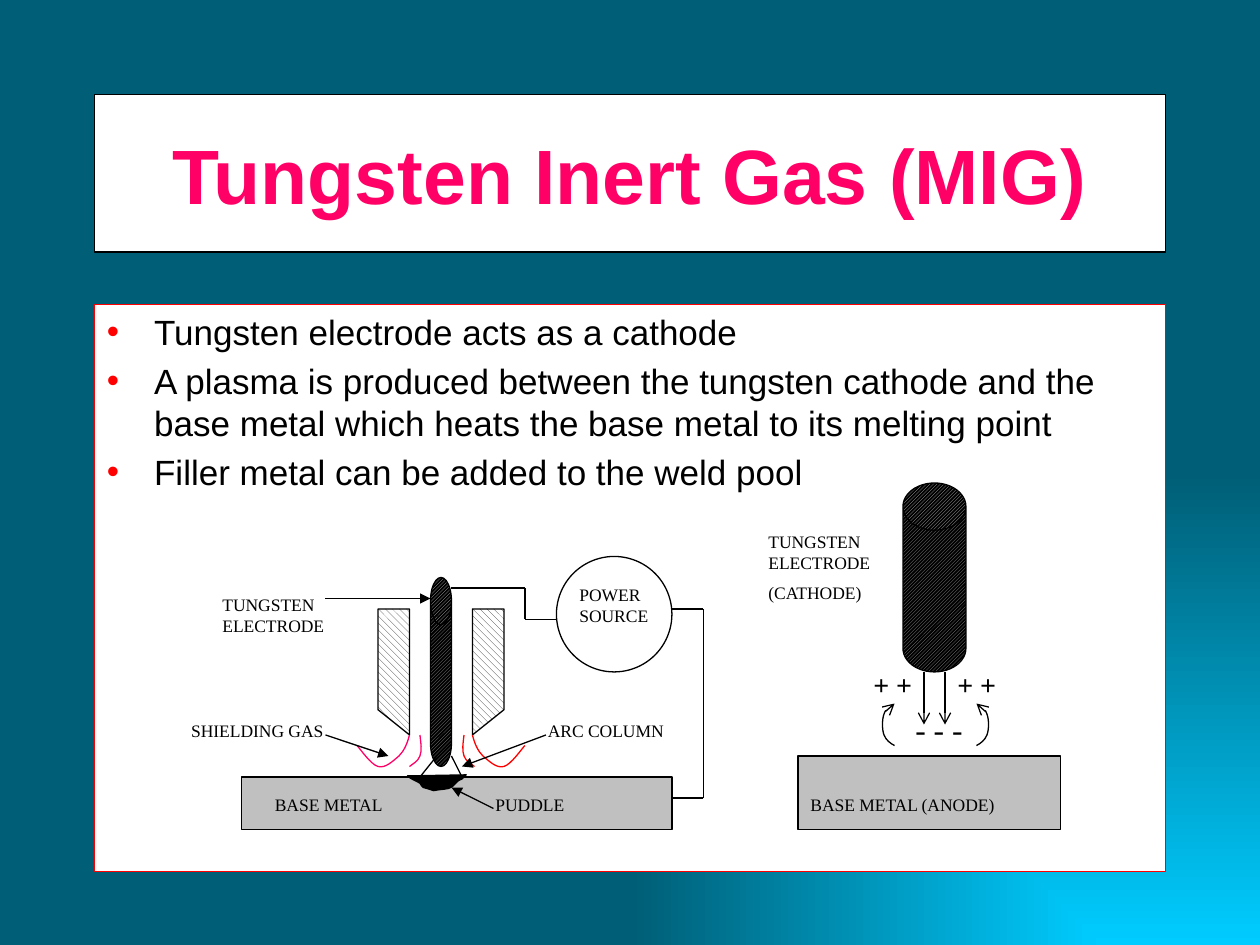
import pptx
import pptx.dml.color
import pptx.enum.dml
import pptx.enum.shapes
import pptx.enum.text
import pptx.oxml
import pptx.oxml.ns
import pptx.util
from lxml import etree

RGB = pptx.dml.color.RGBColor
BLACK, WHITE, SILVER = RGB(0, 0, 0), RGB(255, 255, 255), RGB(0xC0, 0xC0, 0xC0)
RED, PINK = RGB(255, 0, 0), RGB(0xFF, 0, 0x66)
CHARCOAL, GREY = RGB(0x33, 0x33, 0x33), RGB(0x96, 0x96, 0x96)
CYAN, TEAL = RGB(0, 0xCC, 0xFF), RGB(0, 0x5E, 0x76)

SHAPE = pptx.enum.shapes.MSO_SHAPE
PATTERN = pptx.enum.dml.MSO_PATTERN_TYPE
ALIGN = pptx.enum.text.PP_ALIGN
ANCHOR = pptx.enum.text.MSO_ANCHOR
Pt = pptx.util.Pt
qn = pptx.oxml.ns.qn

# All places and sizes are counted in grid units of a twelfth of an inch.
GRID = pptx.util.Cm(2.54 / 12)

TITLE = "Tungsten Inert Gas (MIG)"
BULLETS = [
    "Tungsten electrode acts as a cathode",
    "A plasma is produced between the tungsten cathode and the base metal "
    "which heats the base metal to its melting point",
    "Filler metal can be added to the weld pool",
]
HATCH = (PATTERN.WIDE_DOWNWARD_DIAGONAL, CHARCOAL, WHITE)
DARK_HATCH = (PATTERN.DARK_UPWARD_DIAGONAL, GREY, BLACK)

# preset, box, fill, flips, adjustment
TORCH_PARTS = [
    (SHAPE.RECTANGLE, (23, 74, 41, 5), SILVER, (), None),
    (SHAPE.FLOWCHART_MANUAL_INPUT, (36, 58, 3, 12), HATCH, ("flipV",), None),
    (SHAPE.FLOWCHART_MANUAL_INPUT, (45, 58, 3, 12), HATCH, ("flipH", "flipV"), None),
    (SHAPE.CAN, (41, 55, 2, 18), DARK_HATCH, (), 2.25),
    (SHAPE.OVAL, (53, 53, 11, 11), None, (), None),
]
CATHODE_PARTS = [
    (SHAPE.CAN, (86, 46, 6, 18), DARK_HATCH, (), 0.75),
    (SHAPE.RECTANGLE, (76, 72, 25, 7), SILVER, (), None),
]

# Bezier curves: a start, then two control points and an end for each piece
OUTER_GAS = [(39, 70), (38.8, 70.8), (38.5, 71.5), (38, 72), (37.4, 72.5),
             (36.7, 73.2), (36, 73), (35.3, 72.8), (34.3, 71.3), (34, 71)]
INNER_GAS = [(40, 70), (40.1, 70.8), (40.2, 71.5), (40, 72),
             (39.8, 72.5), (39.4, 72.7), (39, 73)]
ION_PATH = [(93, 71), (93.4, 70.8), (93.8, 70.5), (94, 70), (94.2, 69.5),
            (94.2, 68.5), (94, 68), (93.8, 67.5), (93.1, 67.2), (93, 67)]
PUDDLE = [(38.8, 73.9), (39.1, 74.2), (39.7, 74.4), (40, 74.6), (40.1, 74.8),
          (40.2, 74.9), (40.3, 75), (40.7, 75.1), (41.3, 75.3), (41.3, 75.3),
          (41.8, 75.2), (42.2, 75.2), (42.7, 75.1), (43.3, 75), (43.3, 74.4),
          (44, 74.2), (44.2, 74), (44.4, 73.8), (44.4, 73.8)]
# curve, axis of its mirrored twin
GAS_FLOWS = [(OUTER_GAS, 42), (INNER_GAS, 42.1)]
ION_AXIS = 89.1

# points, arrowhead
LINES = [
    ([(64, 58), (67, 58), (67, 76), (64, 76)], None),
    ([(53, 59), (50, 59), (50, 56), (43, 56)], None),
    ([(41.6, 72), (40, 74)], None),
    ([(43, 72), (44, 74)], None),
    ([(52, 70), (44, 73)], "triangle"),
    ([(31, 70), (37, 72)], "triangle"),
    ([(47, 77), (43, 75)], "triangle"),
    ([(31, 57), (41, 57)], "triangle"),
    ([(88, 64), (88, 69)], "arrow"),
    ([(90, 64), (90, 69)], "arrow"),
]

# paragraphs, box, size, bold, alignment
LABELS = [
    (["BASE METAL"], (25, 75, 18, 3.2), 10, False, ALIGN.LEFT),
    (["PUDDLE"], (46, 75, 14, 3.2), 10, False, ALIGN.LEFT),
    (["POWER SOURCE"], (54, 55, 9, 5.2), 10, False, ALIGN.LEFT),
    (["ARC COLUMN"], (51, 68, 14, 3.2), 10, False, ALIGN.LEFT),
    (["SHIELDING GAS"], (15, 68, 19, 3.2), 10, False, ALIGN.CENTER),
    (["TUNGSTEN ELECTRODE"], (20, 56, 15, 5.2), 10, False, ALIGN.LEFT),
    (["+ +"], (90, 63, 12, 4.4), 16, True, ALIGN.LEFT),
    (["BASE METAL (ANODE)"], (76, 75, 22, 3.2), 10, False, ALIGN.LEFT),
    (["TUNGSTEN ELECTRODE", "(CATHODE)"], (72, 50, 15, 8.2), 10, False, ALIGN.LEFT),
    (["- - -"], (86, 67, 9, 4.8), 18, False, ALIGN.LEFT),
    (["+ +"], (82, 63, 12, 4.4), 16, True, ALIGN.LEFT),
]


def on_grid(numbers):
    return [round(number * GRID) for number in numbers]


def paint(shape, fill, outline=BLACK):
    """Fill with a colour, a (pattern, fore, back) tuple or nothing."""
    shape.shadow.inherit = False
    if fill is None:
        shape.fill.background()
    elif isinstance(fill, RGB):
        shape.fill.solid()
        shape.fill.fore_color.rgb = fill
    else:
        shape.fill.patterned()
        shape.fill.pattern, shape.fill.fore_color.rgb, shape.fill.back_color.rgb = fill
    shape.line.color.rgb = outline
    shape.line.width = Pt(0.75)


def add_part(slide, preset, box, fill, flips=(), adjustment=None, outline=BLACK):
    part = slide.shapes.add_shape(preset, *on_grid(box))
    paint(part, fill, outline)
    for flip in flips:
        part.element.spPr.find(qn("a:xfrm")).set(flip, "1")
    if adjustment is not None:
        part.adjustments[0] = adjustment
    return part


def write(shape, paragraphs, align, gap, **font):
    frame = shape.text_frame
    frame.word_wrap = True
    color = font.pop("color")
    for index, words in enumerate(paragraphs):
        paragraph = frame.add_paragraph() if index else frame.paragraphs[0]
        paragraph.alignment = align
        if index:
            paragraph.space_before = Pt(gap)
        run = paragraph.add_run()
        run.text = words
        run.font.color.rgb = color
        for name, value in font.items():
            setattr(run.font, name, value)


def add_head(line, head):
    etree.SubElement(line.line._get_or_add_ln(), qn("a:tailEnd"), type=head)


def mirror(points, axis):
    return [(2 * axis - x, y) for x, y in points]


def add_curve(slide, points, color, fill=None, head=None):
    """Draw the points as a polygon, then join each three sides into a Bezier piece."""
    track = [(x * 100, y * 100) for x, y in points]
    builder = slide.shapes.build_freeform(*track[0], scale=GRID / 100)
    builder.add_line_segments(track[1:], close=fill is not None)
    curve = builder.convert_to_shape()
    sides = list(curve.element.iter(qn("a:lnTo")))
    for first in range(0, len(points) - 1, 3):
        piece = etree.Element(qn("a:cubicBezTo"))
        sides[first].addprevious(piece)
        for side in sides[first:first + 3]:
            piece.append(side[0])
            side.getparent().remove(side)
    paint(curve, fill, color)
    if head:
        add_head(curve, head)


def main():
    deck = pptx.Presentation()
    deck.slide_width, deck.slide_height = on_grid((120, 90))
    slide = deck.slides.add_slide(deck.slide_layouts[6])

    backdrop = slide.background.fill
    backdrop.gradient()
    for stop, color in zip(backdrop.gradient_stops, (CYAN, TEAL)):
        stop.color.rgb = color
    gradient = next(slide.element.iter(qn("a:gradFill")))
    corner = etree.Element(qn("a:path"), {"path": "rect"})
    etree.SubElement(corner, qn("a:fillToRect"), l="100000", t="100000")
    gradient.replace(gradient.find(qn("a:lin")), corner)

    body = add_part(slide, SHAPE.RECTANGLE, (9, 29, 102, 54), WHITE, outline=RED)
    body.text_frame.vertical_anchor = ANCHOR.TOP
    write(body, BULLETS, ALIGN.LEFT, 4, name="Arial", size=Pt(20), bold=False, color=BLACK)
    indent = round(4.5 * GRID)
    for paragraph in body.text_frame.paragraphs:
        layout = paragraph._p.get_or_add_pPr()
        layout.set("marL", str(indent))
        layout.set("indent", str(-indent))
        tint = etree.SubElement(layout, qn("a:buClr"))
        etree.SubElement(tint, qn("a:srgbClr"), val=str(RED))
        etree.SubElement(layout, qn("a:buFont"), typeface="Arial")
        etree.SubElement(layout, qn("a:buChar"), char="•")

    heading = add_part(slide, SHAPE.RECTANGLE, (9, 9, 102, 15), WHITE)
    heading.text_frame.vertical_anchor = ANCHOR.MIDDLE
    write(heading, [TITLE], ALIGN.CENTER, 0, name="Arial", size=Pt(44), bold=True, color=PINK)

    for part in TORCH_PARTS + CATHODE_PARTS:
        add_part(slide, *part)
    for gas, axis in GAS_FLOWS:
        add_curve(slide, gas, PINK)
        add_curve(slide, mirror(gas, axis), RED)
    add_curve(slide, PUDDLE, BLACK, fill=BLACK)
    for ions in (ION_PATH, mirror(ION_PATH, ION_AXIS)):
        add_curve(slide, ions, BLACK, head="arrow")

    for points, head in LINES:
        for start, end in zip(points, points[1:]):
            line = slide.shapes.add_connector(
                pptx.enum.shapes.MSO_CONNECTOR.STRAIGHT, *on_grid(start + end))
            line.line.color.rgb = BLACK
            line.line.width = Pt(0.75)
            if head:
                add_head(line, head)
            etree.SubElement(line.element.spPr, qn("a:effectLst"))

    for paragraphs, box, size, bold, align in LABELS:
        label = slide.shapes.add_textbox(*on_grid(box))
        write(label, paragraphs, align, size / 2,
              name="Times New Roman", size=Pt(size), bold=bold, color=BLACK)

    deck.save("out.pptx")


if __name__ == "__main__":
    main()
